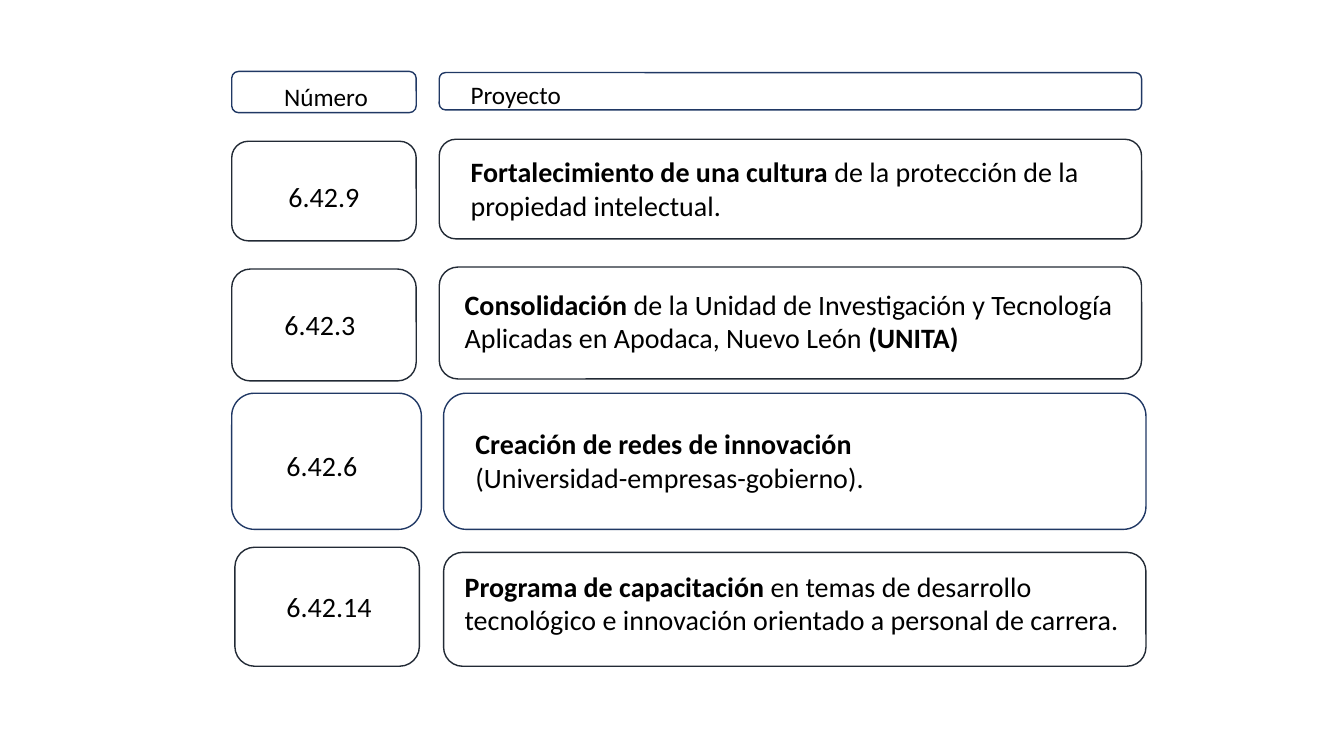
from dataclasses import dataclass

from pptx import Presentation
from pptx.dml.color import RGBColor
from pptx.enum.shapes import MSO_SHAPE
from pptx.enum.text import MSO_AUTO_SIZE, PP_ALIGN
from pptx.util import Cm, Pt


@dataclass(frozen=True)
class Theme:
    font: str = "Calibri"
    text: RGBColor = RGBColor(0x00, 0x00, 0x00)
    dark: RGBColor = RGBColor(0x22, 0x2A, 0x35)
    navy: RGBColor = RGBColor(0x20, 0x38, 0x64)
    header_size: Pt = Pt(18)
    body_size: Pt = Pt(20)
    outline: Pt = Pt(1)


theme = Theme()


def add_frame(slide, bounds, color):
    """Draw an unfilled rounded frame; bounds are in centimetres."""
    shape = slide.shapes.add_shape(MSO_SHAPE.ROUNDED_RECTANGLE, *map(Cm, bounds))
    shape.shadow.inherit = False
    shape.fill.background()
    shape.line.color.rgb = color
    shape.line.width = theme.outline


def add_label(slide, bounds, paragraphs, size, wrap=True, alignment=PP_ALIGN.LEFT):
    """Write paragraphs, each a list of (text, bold) pieces."""
    text_frame = slide.shapes.add_textbox(*map(Cm, bounds)).text_frame
    text_frame.word_wrap = wrap
    text_frame.auto_size = MSO_AUTO_SIZE.SHAPE_TO_FIT_TEXT
    for index, pieces in enumerate(paragraphs):
        paragraph = text_frame.add_paragraph() if index else text_frame.paragraphs[0]
        paragraph.alignment = alignment
        for text, bold in pieces:
            run = paragraph.add_run()
            run.text = text
            run.font.name = theme.font
            run.font.size = size
            run.font.bold = bold
            run.font.color.rgb = theme.text


presentation = Presentation()
presentation.slide_width = Cm(33.87)
presentation.slide_height = Cm(19.05)
slide = presentation.slides.add_slide(presentation.slide_layouts[6])

# Column headings: frame, label position, text
headings = [
    ((5.84, 1.8, 4.65, 1.04), (6.91, 1.93, 2.74, 1.02), "Número"),
    ((11.07, 1.83, 17.7, 0.94), (11.61, 1.88, 8.59, 0.86), "Proyecto"),
]
for frame, label, heading in headings:
    add_frame(slide, frame, theme.navy)
    add_label(slide, label, [[(heading, False)]], theme.header_size)

# Projects: colour, number frame and label, project frame and label, texts
projects = [
    (theme.dark,
     (5.84, 3.56, 4.65, 2.51), (7.01, 4.39, 2.31, 1.12), "6.42.9",
     (11.07, 3.51, 17.7, 2.51), (11.61, 3.78, 16.94, 1.96),
     [[("Fortalecimiento de una cultura ", True),
       ("de la protección de la propiedad intelectual.", False)]]),
    (theme.dark,
     (5.84, 6.78, 4.65, 2.82), (6.91, 7.62, 2.31, 1.12), "6.42.3",
     (11.07, 6.73, 17.7, 2.82), (11.46, 7.11, 16.94, 1.96),
     [[("Consolidación ", True),
       ("de la Unidad de Investigación y Tecnología Aplicadas en Apodaca, "
        "Nuevo León ", False),
       ("(UNITA)", True)]]),
    (theme.navy,
     (5.84, 9.91, 4.78, 3.43), (6.96, 11.18, 2.31, 1.12), "6.42.6",
     (11.18, 9.91, 17.7, 3.43), (11.73, 10.62, 16.41, 1.96),
     [[("Creación de redes de innovación", True)],
      [("(Universidad-empresas-gobierno).", False)]]),
    (theme.dark,
     (5.92, 13.79, 4.65, 3.0), (6.96, 14.73, 2.67, 1.12), "6.42.14",
     (11.18, 13.92, 17.7, 2.87), (11.46, 14.22, 17.15, 1.96),
     [[("Programa de capacitación ", True),
       ("en temas de desarrollo tecnológico e innovación orientado a "
        "personal de carrera.", False)]]),
]
for (color, number_frame, number_label, number,
     project_frame, project_label, description) in projects:
    add_frame(slide, number_frame, color)
    add_label(slide, number_label, [[(number, False)]], theme.body_size,
              wrap=False, alignment=PP_ALIGN.CENTER)
    add_frame(slide, project_frame, color)
    add_label(slide, project_label, description, theme.body_size)

presentation.save("out.pptx")
